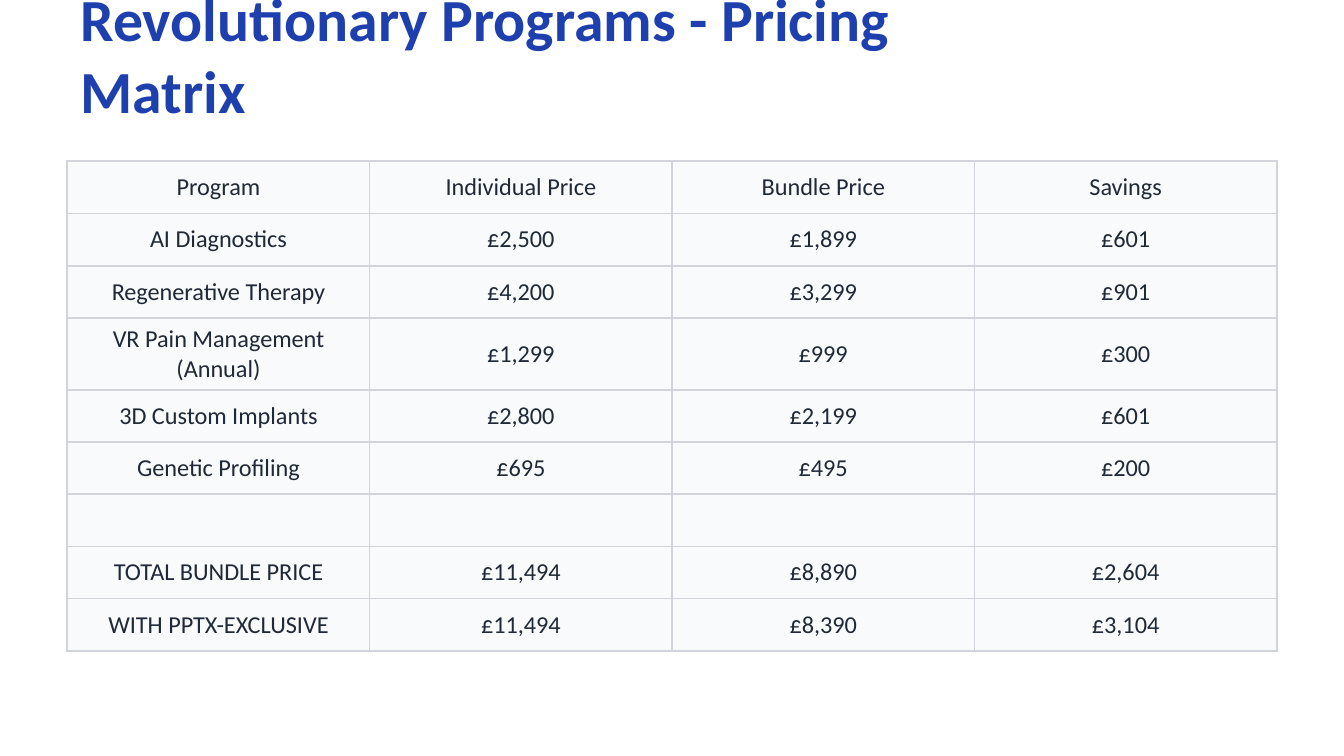
from dataclasses import dataclass

from lxml.etree import SubElement
from pptx import Presentation
from pptx.dml.color import RGBColor
from pptx.enum.text import MSO_ANCHOR, PP_ALIGN
from pptx.oxml.ns import qn
from pptx.util import Pt

PX = 5715

TITLE = "Revolutionary Programs - Pricing Matrix"
PRICES = [
    ("Program", "Individual Price", "Bundle Price", "Savings"),
    ("AI Diagnostics", "£2,500", "£1,899", "£601"),
    ("Regenerative Therapy", "£4,200", "£3,299", "£901"),
    ("VR Pain Management (Annual)", "£1,299", "£999", "£300"),
    ("3D Custom Implants", "£2,800", "£2,199", "£601"),
    ("Genetic Profiling", "£695", "£495", "£200"),
    ("", "", "", ""),
    ("TOTAL BUNDLE PRICE", "£11,494", "£8,890", "£2,604"),
    ("WITH PPTX-EXCLUSIVE", "£11,494", "£8,390", "£3,104"),
]


@dataclass(frozen=True)
class Theme:
    font: str = "Calibri"
    background: str = "FFFFFF"
    title: str = "1E40AF"
    body: str = "1F2937"
    cell: str = "F9FAFB"
    border: str = "D1D5DB"
    title_size: int = 32
    body_size: int = 13
    border_width: int = 1


THEME = Theme()


def px(*lengths):
    return [n * PX for n in lengths]


def write(tf, text, *, size, color, bold=False, align=PP_ALIGN.LEFT):
    p = tf.paragraphs[0]
    p.alignment = align
    if not text:
        p._p.get_or_add_endParaRPr().set("sz", str(size * 100))
        return
    r = p.add_run()
    r.text = text
    r.font.name = THEME.font
    r.font.size = Pt(size)
    r.font.bold = bold
    r.font.color.rgb = RGBColor.from_string(color)


def add_borders(cell):
    tc_pr = cell._tc.get_or_add_tcPr()
    for i, side in enumerate(("lnL", "lnR", "lnT", "lnB")):
        ln = tc_pr.makeelement(qn(f"a:{side}"), {"w": str(Pt(THEME.border_width))})
        fill = SubElement(ln, qn("a:solidFill"))
        SubElement(fill, qn("a:srgbClr"), val=THEME.border)
        tc_pr.insert(i, ln)


def add_title(s):
    tf = s.shapes.add_textbox(*px(80, 64, 1200, 0)).text_frame
    tf.word_wrap = True
    tf.vertical_anchor = MSO_ANCHOR.MIDDLE
    write(tf, TITLE, size=THEME.title_size, color=THEME.title, bold=True)


def add_price_table(s):
    box = px(80, 192, 1440, 560)
    table = s.shapes.add_table(len(PRICES), len(PRICES[0]), *box).table
    table.first_row = table.horz_banding = False
    for i, row in enumerate(PRICES):
        for j, text in enumerate(row):
            cell = table.cell(i, j)
            cell.vertical_anchor = MSO_ANCHOR.MIDDLE
            cell.fill.solid()
            cell.fill.fore_color.rgb = RGBColor.from_string(THEME.cell)
            add_borders(cell)
            write(cell.text_frame, text, size=THEME.body_size,
                  color=THEME.body, align=PP_ALIGN.CENTER)


def main():
    prs = Presentation()
    prs.slide_width, prs.slide_height = px(1600, 900)
    s = prs.slides.add_slide(prs.slide_layouts[6])
    s.background.fill.solid()
    s.background.fill.fore_color.rgb = RGBColor.from_string(THEME.background)
    add_title(s)
    add_price_table(s)
    prs.save("out.pptx")


if __name__ == "__main__":
    main()
